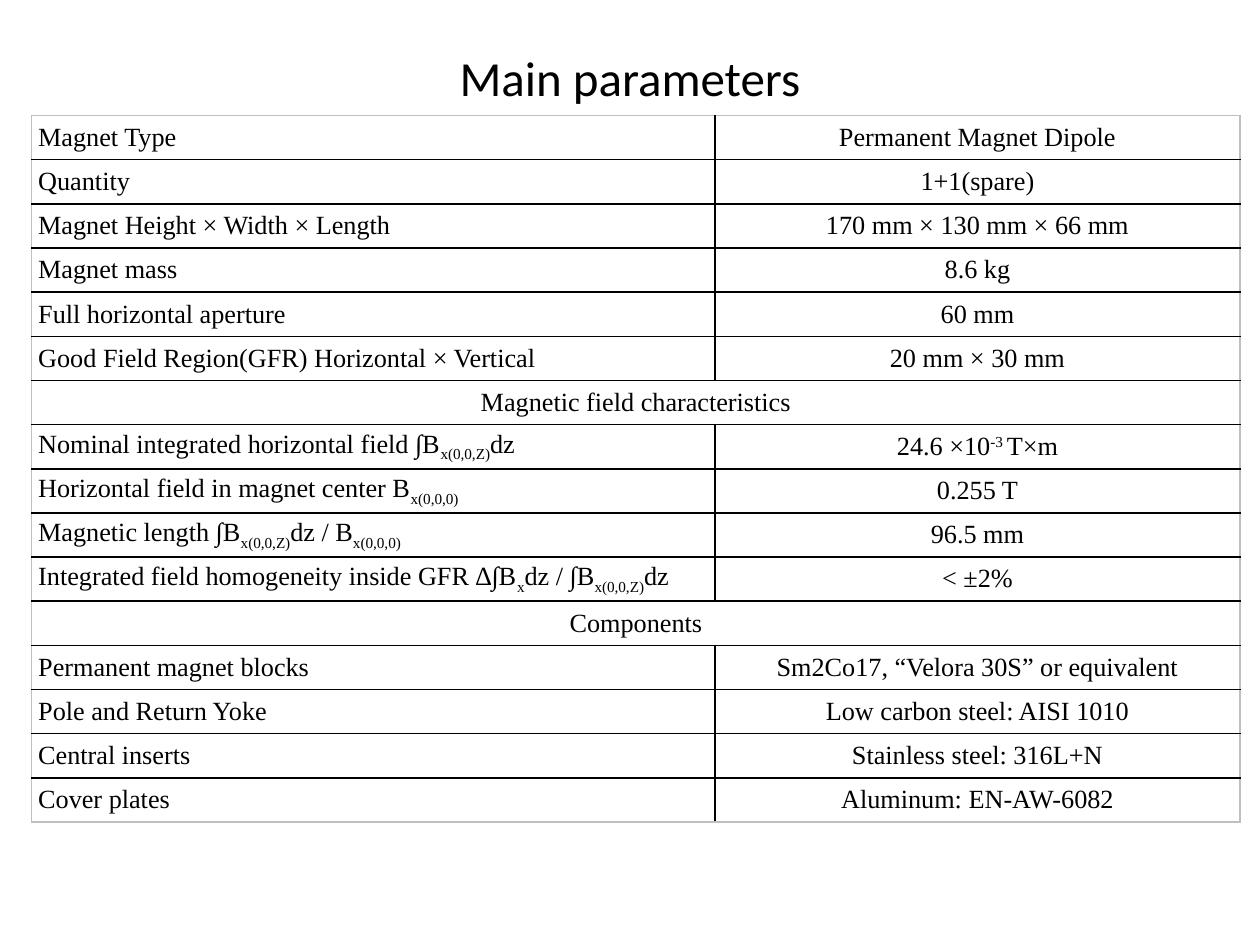
from dataclasses import dataclass

from lxml import etree
from pptx import Presentation
from pptx.dml.color import RGBColor
from pptx.enum.text import MSO_ANCHOR, PP_ALIGN
from pptx.oxml.ns import qn
from pptx.util import Cm, Pt

TITLE_ONLY_LAYOUT = 5
LEFT, CENTER = PP_ALIGN.LEFT, PP_ALIGN.CENTER
MIDDLE = MSO_ANCHOR.MIDDLE
SUB, SUPER = -25000, 30000


@dataclass(frozen=True)
class Theme:
    text: str = "000000"
    inner_border: str = "000000"
    outer_border: str = "BFBFBF"
    border_width: int = Pt(1)
    title_font: str = "Calibri"
    title_size: int = Pt(28)
    table_font: str = "Times New Roman"
    table_size: int = Pt(15)


THEME = Theme()

COLUMN_WIDTHS = (Cm(13.77), Cm(10.59))
ROW_HEIGHT = Cm(0.89)

# Each cell is a list of runs: plain text, or (text, baseline shift).
# A row with one cell is a section heading across the table.
FIELD_ALONG_Z = ("x(0,0,Z)", SUB)
FIELD_AT_CENTER = ("x(0,0,0)", SUB)
PARAMETERS = [
    (["Magnet Type"], ["Permanent Magnet Dipole"]),
    (["Quantity"], ["1+1(spare)"]),
    (["Magnet Height × Width × Length"], ["170 mm × 130 mm × 66 mm"]),
    (["Magnet mass"], ["8.6 kg"]),
    (["Full horizontal aperture"], ["60 mm"]),
    (["Good Field Region(GFR) Horizontal × Vertical"], ["20 mm × 30 mm"]),
    (["Magnetic field characteristics"],),
    (["Nominal integrated horizontal field ∫B", FIELD_ALONG_Z, "dz"],
     ["24.6 ×10", ("-3 ", SUPER), "T×m"]),
    (["Horizontal field in magnet center B", FIELD_AT_CENTER], ["0.255 T"]),
    (["Magnetic length ∫B", FIELD_ALONG_Z, "dz / B", FIELD_AT_CENTER],
     ["96.5 mm"]),
    (["Integrated field homogeneity inside GFR ∆∫B", ("x", SUB), "dz / ∫B",
      FIELD_ALONG_Z, "dz"], ["< ±2%"]),
    (["Components"],),
    (["Permanent magnet blocks"], ["Sm2Co17, “Velora 30S” or equivalent"]),
    (["Pole and Return Yoke"], ["Low carbon steel: AISI 1010"]),
    (["Central inserts"], ["Stainless steel: 316L+N"]),
    (["Cover plates"], ["Aluminum: EN-AW-6082"]),
]


def add_run(paragraph, text, font_name, size, baseline=0):
    run = paragraph.add_run()
    run.text = text
    run.font.name = font_name
    run.font.size = size
    run.font.color.rgb = RGBColor.from_string(THEME.text)
    if baseline:
        run.font._element.set("baseline", str(baseline))


def set_title(slide, text):
    title = slide.shapes.title
    title.left, title.top = Cm(1.27), Cm(0.76)
    title.width, title.height = Cm(22.86), Cm(1.57)
    title.text_frame.vertical_anchor = MIDDLE
    paragraph = title.text_frame.paragraphs[0]
    paragraph.alignment = CENTER
    add_run(paragraph, text, THEME.title_font, THEME.title_size)


def add_border(cell, side, color):
    """Draw one side of a cell; sides must be added in the order L, R, T, B."""
    properties = cell._tc.get_or_add_tcPr()
    line = etree.SubElement(properties, qn(f"a:ln{side}"),
                            w=str(THEME.border_width))
    fill = etree.SubElement(line, qn("a:solidFill"))
    etree.SubElement(fill, qn("a:srgbClr"), val=color)


def format_cell(cell, row, column, is_section):
    """Set margins, borders and fill: grey around the table, black inside."""
    cell.margin_left = cell.margin_right = Cm(0.13)
    cell.margin_top = cell.margin_bottom = 0
    cell.vertical_anchor = MIDDLE
    outer_sides = {
        "L": column == 0 or is_section,
        "R": column == 1 or is_section,
        "T": row == 0,
        "B": row == len(PARAMETERS) - 1,
    }
    for side, is_outer in outer_sides.items():
        add_border(cell, side,
                   THEME.outer_border if is_outer else THEME.inner_border)
    cell.fill.background()


def write_cell(cell, runs, alignment):
    paragraph = cell.text_frame.paragraphs[0]
    paragraph.alignment = alignment
    for run in runs:
        text, baseline = (run, 0) if isinstance(run, str) else run
        add_run(paragraph, text, THEME.table_font, THEME.table_size, baseline)


def add_parameter_table(slide):
    row_count = len(PARAMETERS)
    table = slide.shapes.add_table(
        row_count, len(COLUMN_WIDTHS), Cm(0.64), Cm(2.33),
        sum(COLUMN_WIDTHS), ROW_HEIGHT * row_count).table
    table.first_row = table.horz_banding = False
    for column, width in zip(table.columns, COLUMN_WIDTHS):
        column.width = width
    for row, contents in enumerate(PARAMETERS):
        table.rows[row].height = ROW_HEIGHT
        is_section = len(contents) == 1
        if is_section:
            table.cell(row, 0).merge(table.cell(row, 1))
        for column in range(len(COLUMN_WIDTHS)):
            format_cell(table.cell(row, column), row, column, is_section)
        for column, runs in enumerate(contents):
            alignment = CENTER if is_section or column == 1 else LEFT
            write_cell(table.cell(row, column), runs, alignment)


def main():
    presentation = Presentation()
    presentation.slide_width, presentation.slide_height = Cm(25.4), Cm(19.05)
    layout = presentation.slide_layouts[TITLE_ONLY_LAYOUT]
    slide = presentation.slides.add_slide(layout)
    set_title(slide, "Main parameters")
    add_parameter_table(slide)
    presentation.save("out.pptx")


if __name__ == "__main__":
    main()
